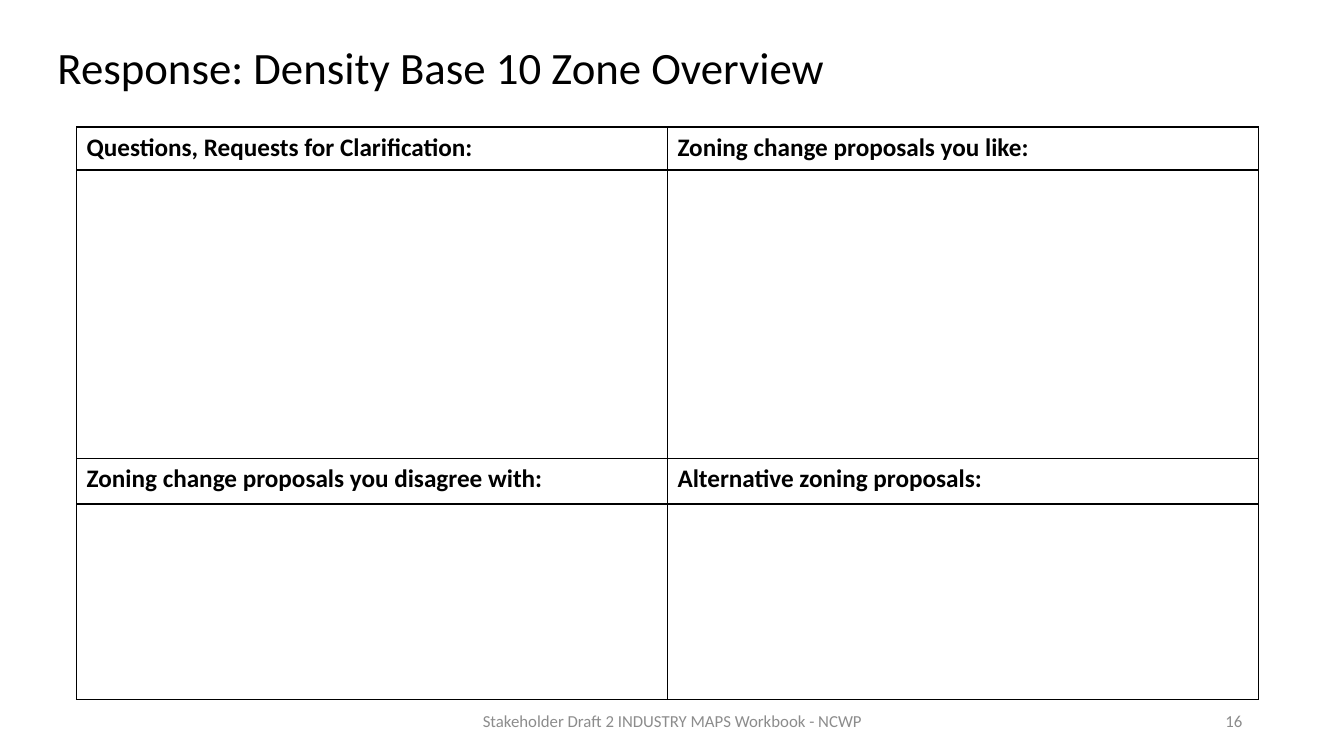
"""Build the zoning response worksheet slide."""
import pptx
import pptx.util
import pptx.dml.color
import pptx.enum.text
import pptx.oxml
import pptx.oxml.ns

Inches, Pt = pptx.util.Inches, pptx.util.Pt
ALIGN = pptx.enum.text.PP_ALIGN

TITLE = "Response: Density Base 10 Zone Overview"
PROMPTS = [
    ("Questions, Requests for Clarification:", "Zoning change proposals you like:"),
    ("", ""),
    ("Zoning change proposals you disagree with:", "Alternative zoning proposals:"),
    ("", ""),
]
ROW_HEIGHTS = [0.43, 2.86, 0.45, 1.94]
COLUMN_WIDTH = 5.86
TABLE_LEFT, TABLE_TOP = 0.76, 1.26
FOOTERS = [
    ("Stakeholder Draft 2 INDUSTRY MAPS Workbook - NCWP", 4.42, 4.5, ALIGN.CENTER),
    ("16", 9.42, 3, ALIGN.RIGHT),
]
FONT = "Calibri"
BLACK = pptx.dml.color.RGBColor(0x00, 0x00, 0x00)
GRAY = pptx.dml.color.RGBColor(0x8C, 0x8C, 0x8C)


def write(frame, text, size, color, align=ALIGN.LEFT, bold=False):
    """Put one formatted paragraph into a text frame."""
    frame.word_wrap = True
    para = frame.paragraphs[0]
    para.text = text
    para.alignment = align
    para.font.name = FONT
    para.font.size = Pt(size)
    para.font.bold = bold
    para.font.color.rgb = color
    return para


def outline(cell, widths):
    """Draw the cell borders, given in points by side."""
    properties = cell._tc.get_or_add_tcPr()
    for side, width in widths.items():
        properties.append(pptx.oxml.parse_xml(
            f'<a:ln{side} {pptx.oxml.ns.nsdecls("a")} w="{Pt(width)}">'
            f'<a:solidFill><a:srgbClr val="{BLACK}"/></a:solidFill></a:ln{side}>'))


def add_title(page):
    """Place and format the title."""
    title = page.shapes.title
    title.left, title.top = Inches(0.47), Inches(0.4)
    title.width, title.height = Inches(11.95), Inches(0.59)
    frame = title.text_frame
    frame.auto_size = pptx.enum.text.MSO_AUTO_SIZE.NONE
    frame.vertical_anchor = pptx.enum.text.MSO_ANCHOR.MIDDLE
    write(frame, TITLE, 32, BLACK).line_spacing = 0.9


def add_footers(page):
    """Add the footer text and the page number."""
    for text, left, width, align in FOOTERS:
        box = page.shapes.add_textbox(Inches(left), Inches(6.95), Inches(width), Inches(0.4))
        box.text_frame.vertical_anchor = pptx.enum.text.MSO_ANCHOR.MIDDLE
        write(box.text_frame, text, 12, GRAY, align)


def add_worksheet(page):
    """Add the table of prompts with blank answer cells."""
    columns = len(PROMPTS[0])
    table = page.shapes.add_table(
        len(PROMPTS), columns, Inches(TABLE_LEFT), Inches(TABLE_TOP),
        Inches(COLUMN_WIDTH * columns), Inches(sum(ROW_HEIGHTS))).table
    table.horz_banding = False
    for column in table.columns:
        column.width = Inches(COLUMN_WIDTH)
    for index, (height, prompts) in enumerate(zip(ROW_HEIGHTS, PROMPTS)):
        table.rows[index].height = Inches(height)
        top = 1.5 if index == 1 else 1
        bottom = 1.5 if index == 0 else 1
        for cell, prompt in zip(table.rows[index].cells, prompts):
            outline(cell, {"L": 1, "R": 1, "T": top, "B": bottom})
            cell.fill.background()
            if prompt:
                write(cell.text_frame, prompt, 18, BLACK, bold=True)


def main():
    """Create and save the deck."""
    deck = pptx.Presentation()
    deck.slide_width, deck.slide_height = Inches(13.33), Inches(7.5)
    page = deck.slides.add_slide(deck.slide_layouts.get_by_name("Title Only"))
    add_title(page)
    add_footers(page)
    add_worksheet(page)
    deck.save("out.pptx")


if __name__ == "__main__":
    main()
